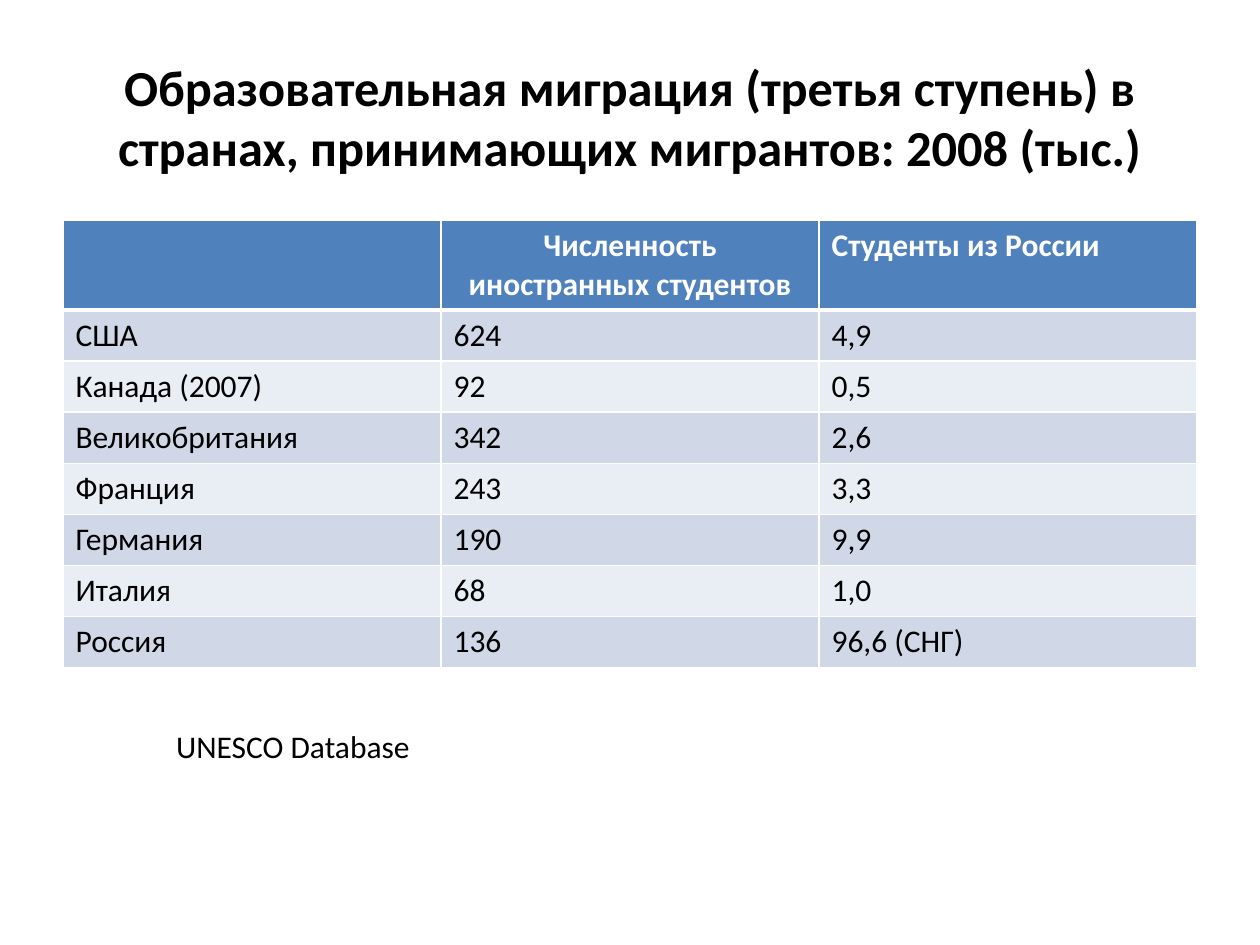
import dataclasses

import lxml.etree
import pptx
import pptx.dml.color
import pptx.enum.text
import pptx.oxml.ns
import pptx.util

Inches = pptx.util.Inches
ALIGN = pptx.enum.text.PP_ALIGN


@dataclasses.dataclass(frozen=True)
class Theme:
    """Hold the colours, font and type sizes of the slide."""
    font: str = "Calibri"
    title_size: float = 28.8
    body_size: float = 18
    ink: str = "000000"
    white: str = "FFFFFF"
    header: str = "4F81BD"
    bands: tuple = ("D0D8E8", "E9EDF4")
    rule: float = 1
    header_rule: float = 3


THEME = Theme()
TITLE = "Образовательная миграция (третья ступень) в странах, принимающих мигрантов: 2008 (тыс.)"
SOURCE = "UNESCO Database"
HEADERS = ("", "Численность иностранных студентов", "Студенты из России")
COUNTRIES = (
    ("США", "624", "4,9"),
    ("Канада (2007)", "92", "0,5"),
    ("Великобритания", "342", "2,6"),
    ("Франция", "243", "3,3"),
    ("Германия", "190", "9,9"),
    ("Италия", "68", "1,0"),
    ("Россия", "136", "96,6 (СНГ)"),
)


def rgb(value):
    """Return a colour object for a hex value."""
    return pptx.dml.color.RGBColor.from_string(value)


def add_text(tf, text, size, color, bold=False, align=ALIGN.LEFT):
    """Write one formatted run into the first paragraph."""
    p = tf.paragraphs[0]
    p.alignment = align
    r = p.add_run()
    r.text = text
    r.font.name = THEME.font
    r.font.size = pptx.util.Pt(size)
    r.font.bold = bold
    r.font.color.rgb = rgb(color)


def set_borders(cell, top, bottom):
    """Draw white borders with the given top and bottom widths."""
    qn = pptx.oxml.ns.qn
    tc_pr = cell._tc.get_or_add_tcPr()
    widths = {"L": THEME.rule, "R": THEME.rule, "T": top, "B": bottom}
    for side, width in widths.items():
        ln = lxml.etree.SubElement(tc_pr, qn(f"a:ln{side}"), w=str(pptx.util.Pt(width)))
        fill = lxml.etree.SubElement(ln, qn("a:solidFill"))
        lxml.etree.SubElement(fill, qn("a:srgbClr"), val=THEME.white)


def add_title(s, x, y, w, h):
    """Place and format the title placeholder."""
    sp = s.shapes.title
    sp.left, sp.top, sp.width, sp.height = map(Inches, (x, y, w, h))
    tf = sp.text_frame
    tf.word_wrap = True
    tf.vertical_anchor = pptx.enum.text.MSO_ANCHOR.MIDDLE
    add_text(tf, TITLE, THEME.title_size, THEME.ink, True, ALIGN.CENTER)


def add_student_table(s, x, y, w, h, header_h=0.7):
    """Build the banded table of students by country."""
    rows = (HEADERS, *COUNTRIES)
    table = s.shapes.add_table(len(rows), len(HEADERS), *map(Inches, (x, y, w, h))).table
    for column in table.columns:
        column.width = Inches(w / len(HEADERS))
    for i, values in enumerate(rows):
        is_header = i == 0
        table.rows[i].height = Inches(header_h if is_header else (h - header_h) / len(COUNTRIES))
        color = THEME.white if is_header else THEME.ink
        top = THEME.header_rule if i == 1 else THEME.rule
        bottom = THEME.header_rule if is_header else THEME.rule
        for j, value in enumerate(values):
            cell = table.cell(i, j)
            set_borders(cell, top, bottom)
            cell.fill.solid()
            cell.fill.fore_color.rgb = rgb(THEME.header if is_header else THEME.bands[(i - 1) % 2])
            if value:
                align = ALIGN.CENTER if is_header and j == 1 else ALIGN.LEFT
                add_text(cell.text_frame, value, THEME.body_size, color, is_header, align)


def add_source(s, x, y, w, h):
    """Place the data source line."""
    tf = s.shapes.add_textbox(*map(Inches, (x, y, w, h))).text_frame
    tf.word_wrap = False
    tf.auto_size = pptx.enum.text.MSO_AUTO_SIZE.SHAPE_TO_FIT_TEXT
    add_text(tf, SOURCE, THEME.body_size, THEME.ink)


def main():
    """Build and save the slide."""
    prs = pptx.Presentation()
    prs.slide_width, prs.slide_height = Inches(10), Inches(7.5)
    s = prs.slides.add_slide(prs.slide_layouts[5])
    add_title(s, 0.5, 0.3, 9, 1.25)
    add_student_table(s, 0.5, 1.75, 9, 3.54)
    add_source(s, 1.3, 5.72, 2.07, 0.4)
    prs.save("out.pptx")


if __name__ == "__main__":
    main()
